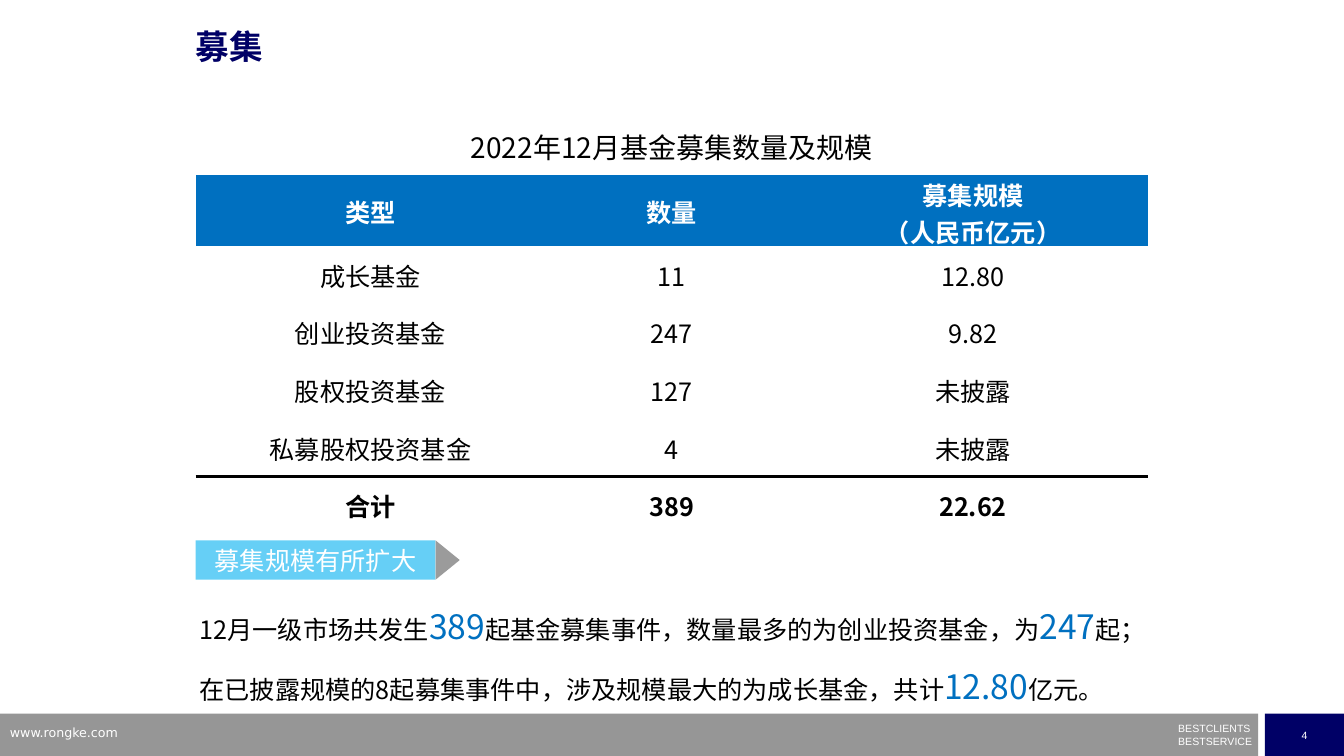
from dataclasses import dataclass

from lxml.etree import SubElement
from pptx import Presentation
from pptx.dml.color import RGBColor
from pptx.enum.shapes import MSO_SHAPE
from pptx.enum.text import MSO_ANCHOR, PP_ALIGN
from pptx.oxml import parse_xml
from pptx.oxml.ns import nsdecls, qn
from pptx.util import Pt


@dataclass(frozen=True)
class Theme:
    cjk: str = "Noto Sans CJK SC"
    small_font: str = "Arial"
    url_font: str = "DejaVu Sans"
    black: str = "000000"
    white: str = "FFFFFF"
    navy: str = "000066"
    blue: str = "0070C0"
    sky: str = "00B0F0"
    dark_gray: str = "595959"
    gray: str = "969696"
    title: float = 24
    caption: float = 20
    body: float = 18
    url: float = 9
    small: float = 7.5


T = Theme()
DEFAULT_INSETS = (7.2, 3.6, 7.2, 3.6)
NO_INSETS = (0, 0, 0, 0)
CELL_INSETS = (0.7, 0.7, 0.7, 0)


def write(p, text, size=T.body, color=T.black, font=T.cjk, bold=False,
          align=PP_ALIGN.LEFT, spacing=None, before=None):
    p.alignment = align
    if spacing:
        p.line_spacing = spacing
    if before:
        p.space_before = Pt(before)
    for i, line in enumerate(text.split("\n")):
        if i:
            p.add_line_break()
        r = p.add_run()
        r.text = line
        r.font.size, r.font.bold, r.font.name = Pt(size), bold, font
        r.font.color.rgb = RGBColor.from_string(color)
        SubElement(r._r.get_or_add_rPr(), qn("a:ea"), typeface=font)


def set_insets(target, insets):
    (target.margin_left, target.margin_top,
     target.margin_right, target.margin_bottom) = map(Pt, insets)


def add_box(s, x, y, w, h, insets=DEFAULT_INSETS):
    tf = s.shapes.add_textbox(Pt(x), Pt(y), Pt(w), Pt(h)).text_frame
    tf.word_wrap = True
    set_insets(tf, insets)
    return tf


def add_block(shapes, kind, x, y, w, h, fill, alpha=None):
    sp = shapes.add_shape(kind, Pt(x), Pt(y), Pt(w), Pt(h))
    sp.shadow.inherit = False
    sp.fill.solid()
    sp.fill.fore_color.rgb = RGBColor.from_string(fill)
    sp.line.fill.background()
    if alpha:
        clr = sp._element.spPr.find(qn("a:solidFill")).find(qn("a:srgbClr"))
        SubElement(clr, qn("a:alpha"), val=str(alpha * 1000))
    tf = sp.text_frame
    tf.vertical_anchor = MSO_ANCHOR.MIDDLE
    return sp


def footer(s, x, y, w, h):
    page_w, gap = 56.4, 5
    bar_w = w - page_w - gap
    add_block(s.shapes, MSO_SHAPE.RECTANGLE, x, y, bar_w, h, T.gray)
    page = add_block(s.shapes, MSO_SHAPE.RECTANGLE, x + w - page_w, y, page_w, h, T.navy)
    page.text_frame.word_wrap = False
    small = dict(size=T.small, color=T.white, font=T.small_font)
    write(page.text_frame.paragraphs[0], "4", align=PP_ALIGN.CENTER, **small)
    tf = add_box(s, x + bar_w - 57, y + 10, 54.7, 14.4, NO_INSETS)
    write(tf.paragraphs[0], "BESTCLIENTS", spacing=0.5, **small)
    write(tf.add_paragraph(), "BESTSERVICE", spacing=0.5, before=4.3, **small)
    tf = add_box(s, x, y + 4.3, 230, 18.7)
    write(tf.paragraphs[0], "www.rongke.com", size=T.url, color=T.white, font=T.url_font)


def title(s, x, y, w, h):
    tf = add_box(s, x, y, w, h, NO_INSETS)
    write(tf.paragraphs[0], "募集", size=T.title, color=T.navy, bold=True, spacing=0.9)


def add_border(cell, side):
    cell._tc.get_or_add_tcPr().insert(0, parse_xml(
        f'<a:{side} {nsdecls("a")} w="28575"><a:solidFill>'
        f'<a:srgbClr val="{T.black}"/></a:solidFill></a:{side}>'))


def fund_table(s, x, y, w, h):
    rows = [
        ("2022年12月基金募集数量及规模", "", ""),
        ("类型", "数量", "募集规模\n（人民币亿元）"),
        ("成长基金", "11", "12.80"),
        ("创业投资基金", "247", "9.82"),
        ("股权投资基金", "127", "未披露"),
        ("私募股权投资基金", "4", "未披露"),
        ("合计", "389", "22.62"),
    ]
    caption_h, header_h, side_w = 41.8, 50.4, 249.8
    row_h = (h - caption_h - header_h) / (len(rows) - 2)
    table = s.shapes.add_table(len(rows), 3, Pt(x), Pt(y), Pt(w), Pt(h)).table
    table.first_row = table.horz_banding = False
    table._tbl.tblPr.find(qn("a:tableStyleId")).text = "{2D5ABB26-0587-4C30-8999-92F81FD0307C}"
    for col, width in zip(table.columns, (side_w, w - 2 * side_w, side_w)):
        col.width = Pt(width)
    for row, height in zip(table.rows, [caption_h, header_h] + [row_h] * 5):
        row.height = Pt(height)
    table.cell(0, 0).merge(table.cell(0, 2))
    total = len(rows) - 1
    for i, values in enumerate(rows):
        for j, value in enumerate(values):
            cell = table.cell(i, j)
            set_insets(cell, CELL_INSETS)
            cell.vertical_anchor = MSO_ANCHOR.MIDDLE
            if i == 1:
                cell.fill.solid()
                cell.fill.fore_color.rgb = RGBColor.from_string(T.blue)
            else:
                cell.fill.background()
            if i == total - 1:
                add_border(cell, "a:lnB"[2:])
            elif i == total:
                add_border(cell, "lnT")
            if value:
                write(cell.text_frame.paragraphs[0], value,
                      size=T.body if i else T.caption,
                      color=T.white if i == 1 else T.black,
                      bold=i in (1, total), align=PP_ALIGN.CENTER)


def heading_tag(s, x, y, w, h):
    tip = 17.3
    shapes = s.shapes.add_group_shape().shapes
    label = add_block(shapes, MSO_SHAPE.RECTANGLE, x, y, w, h, T.sky, 60)
    label.text_frame.word_wrap = True
    write(label.text_frame.paragraphs[0], "募集规模有所扩大", color=T.white,
          align=PP_ALIGN.CENTER)
    arrow = add_block(shapes, MSO_SHAPE.ISOSCELES_TRIANGLE,
                      x + w + (tip - h) / 2, y + (h - tip) / 2, h, tip, T.dark_gray, 60)
    arrow.rotation = 90


def summary(s, x, y, w, h):
    paragraphs = [
        ("12月一级市场共发生", "389", "起基金募集事件，数量最多的为创业投资基金，为", "247", "起；"),
        ("在已披露规模的8起募集事件中，涉及规模最大的为成长基金，共计", "12.80", "亿元。"),
    ]
    tf = add_box(s, x, y, w, h)
    for i, parts in enumerate(paragraphs):
        p = tf.add_paragraph() if i else tf.paragraphs[0]
        pPr = p._p.get_or_add_pPr()
        pPr.set("marL", "0")
        pPr.set("indent", str(Pt(36)))
        for j, part in enumerate(parts):
            figure = j % 2
            write(p, part, size=T.title if figure else T.body,
                  color=T.blue if figure else T.black,
                  align=PP_ALIGN.JUSTIFY, spacing=1.5)


def main():
    prs = Presentation()
    prs.slide_width, prs.slide_height = Pt(960), Pt(540)
    s = prs.slides.add_slide(prs.slide_layouts[6])
    left = 139.7
    footer(s, 0, 509.8, 960, 30.2)
    summary(s, 99.4, 414.7, 826.6, 123.1)
    title(s, left, 21.6, 648, 28)
    heading_tag(s, left, 386, 171.4, 28.1)
    fund_table(s, left, 83.5, 680.3, 298)
    prs.save("out.pptx")


if __name__ == "__main__":
    main()
